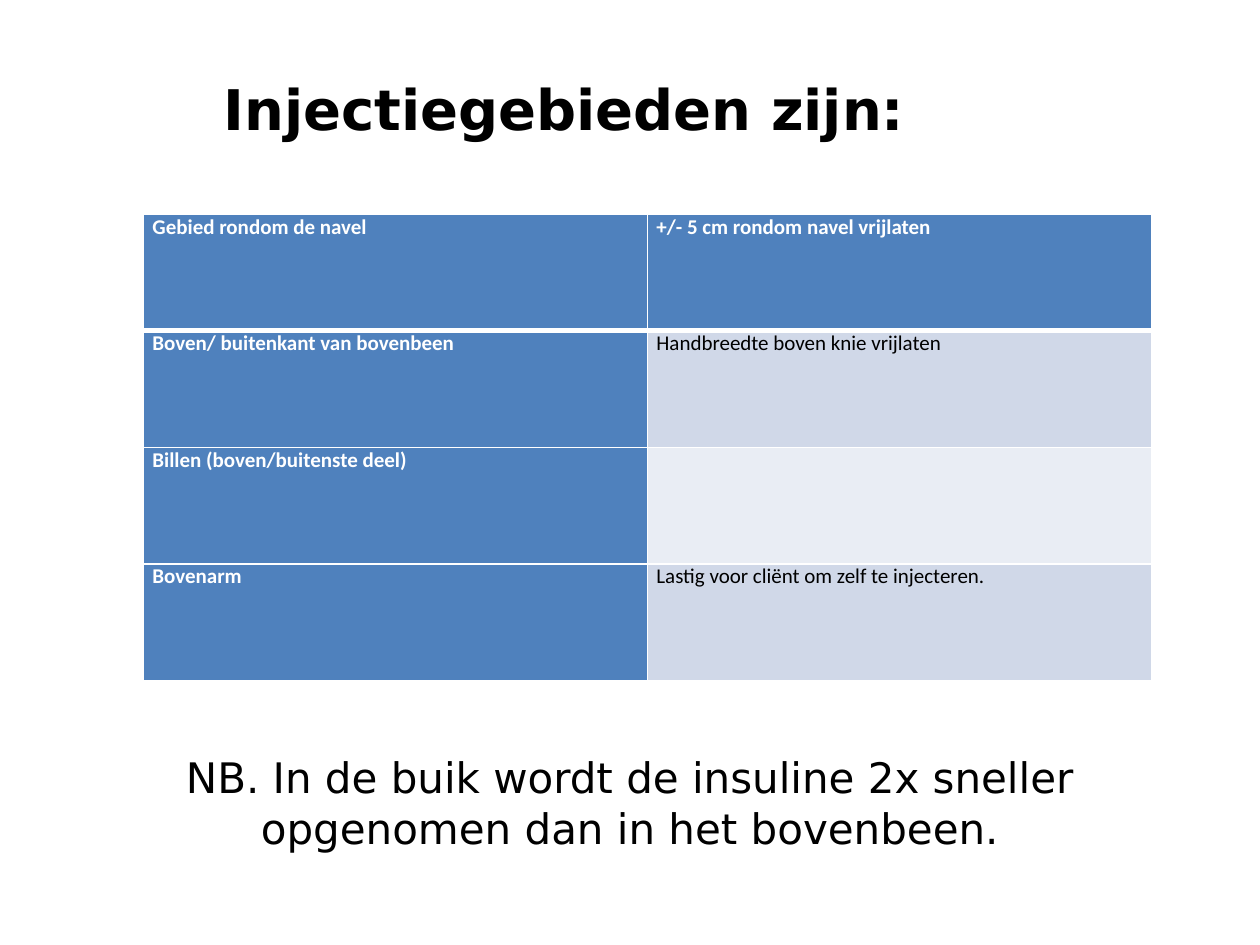
import lxml.etree
import pptx
import pptx.dml.color
import pptx.enum.text
import pptx.oxml.ns
import pptx.util
from pptx.util import Inches

COLORS = {
    "black": "000000",
    "white": "FFFFFF",
    "blue": "4F81BD",
    "band_dark": "D0D8E8",
    "band_light": "E9EDF4",
}
INJECTION_AREAS = [
    ("Gebied rondom de navel", "+/- 5 cm rondom navel vrijlaten"),
    ("Boven/ buitenkant van bovenbeen", "Handbreedte boven knie vrijlaten"),
    ("Billen (boven/buitenste deel)", ""),
    ("Bovenarm", "Lastig voor cliënt om zelf te injecteren."),
]


def color(name):
    return pptx.dml.color.RGBColor.from_string(COLORS[name])


def format_runs(paragraph, font_name, size, color_name, bold):
    for run in paragraph.runs:
        run.font.name = font_name
        run.font.size = pptx.util.Pt(size)
        run.font.bold = bold
        run.font.color.rgb = color(color_name)


def add_centered_text(slide, box, text, size, bold, anchor, space_before=0):
    shape = slide.shapes.add_textbox(*box)
    text_frame = shape.text_frame
    text_frame.word_wrap = True
    text_frame.vertical_anchor = anchor
    text_frame.text = text
    paragraph = text_frame.paragraphs[0]
    paragraph.alignment = pptx.enum.text.PP_ALIGN.CENTER
    paragraph.space_before = pptx.util.Pt(space_before)
    format_runs(paragraph, "DejaVu Sans", size, "black", bold)


def set_borders(cell, widths):
    properties = cell._tc.get_or_add_tcPr()
    for side, width in widths.items():
        line = lxml.etree.SubElement(
            properties, pptx.oxml.ns.qn(f"a:ln{side}"), w=str(pptx.util.Pt(width))
        )
        fill = lxml.etree.SubElement(line, pptx.oxml.ns.qn("a:solidFill"))
        lxml.etree.SubElement(fill, pptx.oxml.ns.qn("a:srgbClr"), val=COLORS["white"])


def format_cell(cell, text, row, column):
    emphasized = row == 0 or column == 0
    set_borders(cell, {"L": 1, "R": 1, "T": 3 if row == 1 else 1, "B": 3 if row == 0 else 1})
    cell.fill.solid()
    band = "band_dark" if row % 2 else "band_light"
    cell.fill.fore_color.rgb = color("blue" if emphasized else band)
    cell.margin_left = cell.margin_right = Inches(0.07)
    cell.margin_top = cell.margin_bottom = 0
    cell.text_frame.text = text
    format_runs(
        cell.text_frame.paragraphs[0],
        "Calibri",
        12,
        "white" if emphasized else "black",
        emphasized,
    )


def add_area_table(slide, box):
    row_count, column_count = len(INJECTION_AREAS), len(INJECTION_AREAS[0])
    table = slide.shapes.add_table(row_count, column_count, *box).table
    for row, texts in enumerate(INJECTION_AREAS):
        for column, text in enumerate(texts):
            format_cell(table.cell(row, column), text, row, column)


def main():
    presentation = pptx.Presentation()
    presentation.slide_width = Inches(10)
    presentation.slide_height = Inches(7.5)
    slide = presentation.slides.add_slide(presentation.slide_layouts[6])
    add_centered_text(
        slide,
        (Inches(0.75), Inches(5.56), Inches(8.5), Inches(1.61)),
        "NB. In de buik wordt de insuline 2x sneller opgenomen dan in het bovenbeen.",
        24,
        False,
        pptx.enum.text.MSO_ANCHOR.MIDDLE,
    )
    add_centered_text(
        slide,
        (Inches(0.98), Inches(0.54), Inches(7), Inches(1.08)),
        "Injectiegebieden zijn:",
        32,
        True,
        pptx.enum.text.MSO_ANCHOR.TOP,
        space_before=3,
    )
    add_area_table(slide, (Inches(1.14), Inches(1.7), Inches(8), Inches(3.7)))
    presentation.save("out.pptx")


if __name__ == "__main__":
    main()
